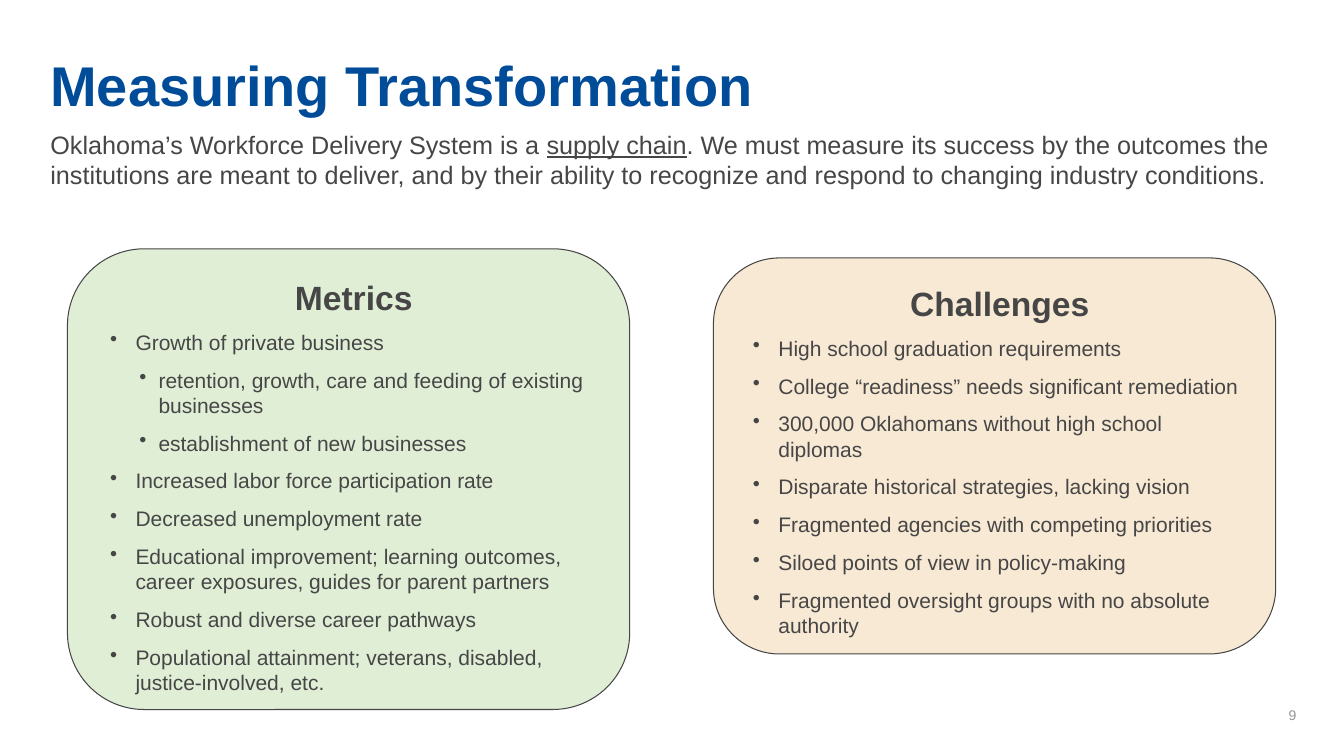
import pptx
import pptx.util
import pptx.dml.color
import pptx.enum.shapes
import pptx.enum.text
import pptx.oxml.ns
import lxml.etree

Cm, Pt = pptx.util.Cm, pptx.util.Pt
RGBColor = pptx.dml.color.RGBColor
Align = pptx.enum.text.PP_ALIGN
Anchor = pptx.enum.text.MSO_ANCHOR

BLUE = RGBColor(0x00, 0x4C, 0x99)
DARK = RGBColor(0x46, 0x46, 0x46)
GRAY = RGBColor(0x94, 0x94, 0x94)
GREEN = RGBColor(0xE0, 0xEE, 0xD6)
PEACH = RGBColor(0xF8, 0xE9, 0xD4)

METRICS = [
    (0, "Growth of private business"),
    (1, "retention, growth, care and feeding of existing businesses"),
    (1, "establishment of new businesses"),
    (0, "Increased labor force participation rate"),
    (0, "Decreased unemployment rate"),
    (0, "Educational improvement; learning outcomes, career exposures, guides for parent partners"),
    (0, "Robust and diverse career pathways"),
    (0, "Populational attainment; veterans, disabled, justice-involved, etc."),
]
CHALLENGES = [
    (0, "High school graduation requirements"),
    (0, "College “readiness” needs significant remediation"),
    (0, "300,000 Oklahomans without high school diplomas"),
    (0, "Disparate historical strategies, lacking vision"),
    (0, "Fragmented agencies with competing priorities"),
    (0, "Siloed points of view in policy-making"),
    (0, "Fragmented oversight groups with no absolute authority"),
]


class SlideBuilder:
    font = "Arial"
    # Left margin and hanging indent for each list level
    indents = [(Cm(0.64), Cm(-0.64)), (Cm(1.22), Cm(-0.48))]

    def __init__(self, page):
        self.page = page

    def place(self, shape, left, top, width, height):
        shape.left, shape.top = Cm(left), Cm(top)
        shape.width, shape.height = Cm(width), Cm(height)

    def frame(self, shape, left_inset, anchor):
        frame = shape.text_frame
        frame.word_wrap = True
        frame.auto_size = pptx.enum.text.MSO_AUTO_SIZE.NONE
        frame.margin_left, frame.margin_right = Cm(left_inset), Cm(0.25)
        frame.margin_top = frame.margin_bottom = Cm(0.13)
        frame.vertical_anchor = anchor
        return frame

    def style(self, para, size, color, bold=False, align=Align.LEFT):
        para.alignment = align
        for span in para.runs:
            span.font.name = self.font
            span.font.size = Pt(size)
            span.font.bold = bold
            span.font.color.rgb = color

    def space(self, para):
        para.space_before = Pt(9)
        para.line_spacing = 1.0

    def bullet(self, para, level):
        para.level = level
        margin, indent = self.indents[level]
        properties = para._p.get_or_add_pPr()
        properties.set("marL", str(margin))
        properties.set("indent", str(indent))
        mark = lxml.etree.SubElement(properties, pptx.oxml.ns.qn("a:buChar"))
        mark.set("char", "•")

    def title(self, text, *position):
        shape = self.page.shapes.title
        self.place(shape, *position)
        frame = self.frame(shape, 0, Anchor.TOP)
        frame.text = text
        self.style(frame.paragraphs[0], 40, BLUE, bold=True)

    def intro(self, parts, underlined, *position):
        shape = self.page.placeholders[1]
        self.place(shape, *position)
        para = self.frame(shape, 0, Anchor.TOP).paragraphs[0]
        for part in parts:
            span = para.add_run()
            span.text = part
            if part == underlined:
                span.font.underline = True
        self.style(para, 18, DARK)
        self.space(para)
        properties = para._p.get_or_add_pPr()
        properties.set("marL", "0")
        properties.set("indent", "0")
        lxml.etree.SubElement(properties, pptx.oxml.ns.qn("a:buNone"))

    def card(self, heading, items, fill, *position):
        shape = self.page.shapes.add_shape(
            pptx.enum.shapes.MSO_SHAPE.ROUNDED_RECTANGLE, *map(Cm, position))
        shape.shadow.inherit = False
        shape.fill.solid()
        shape.fill.fore_color.rgb = fill
        shape.line.color.rgb = DARK
        shape.line.width = Pt(0.75)
        frame = self.frame(shape, 0.51, Anchor.TOP)
        para = frame.paragraphs[0]
        para.text = heading
        self.style(para, 24, DARK, bold=True, align=Align.CENTER)
        self.space(para)
        for level, text in items:
            para = frame.add_paragraph()
            para.text = text
            self.style(para, 15, DARK)
            self.space(para)
            self.bullet(para, level)

    def page_number(self, text, *position):
        box = self.page.shapes.add_textbox(*map(Cm, position))
        frame = self.frame(box, 0.25, Anchor.MIDDLE)
        frame.text = text
        self.style(frame.paragraphs[0], 10, GRAY, align=Align.RIGHT)


def main():
    deck = pptx.Presentation()
    deck.slide_width, deck.slide_height = Cm(33.87), Cm(19.05)
    builder = SlideBuilder(deck.slides.add_slide(deck.slide_layouts[1]))

    # Title and introduction
    builder.title("Measuring Transformation", 1.27, 1.14, 31.65, 2.34)
    builder.intro(
        ["Oklahoma’s Workforce Delivery System is a ", "supply chain",
         ". We must measure its success by the outcomes the institutions are meant to deliver, "
         "and by their ability to recognize and respond to changing industry conditions."],
        "supply chain", 1.27, 3.12, 31.65, 3.18)

    # Page number
    builder.page_number("9", 25.3, 17.73, 7.62, 0.56)

    # Cards
    builder.card("Challenges", CHALLENGES, PEACH, 17.98, 6.5, 14.17, 9.98)
    builder.card("Metrics", METRICS, GREEN, 1.7, 6.27, 14.17, 11.61)

    deck.save("out.pptx")


if __name__ == "__main__":
    main()
